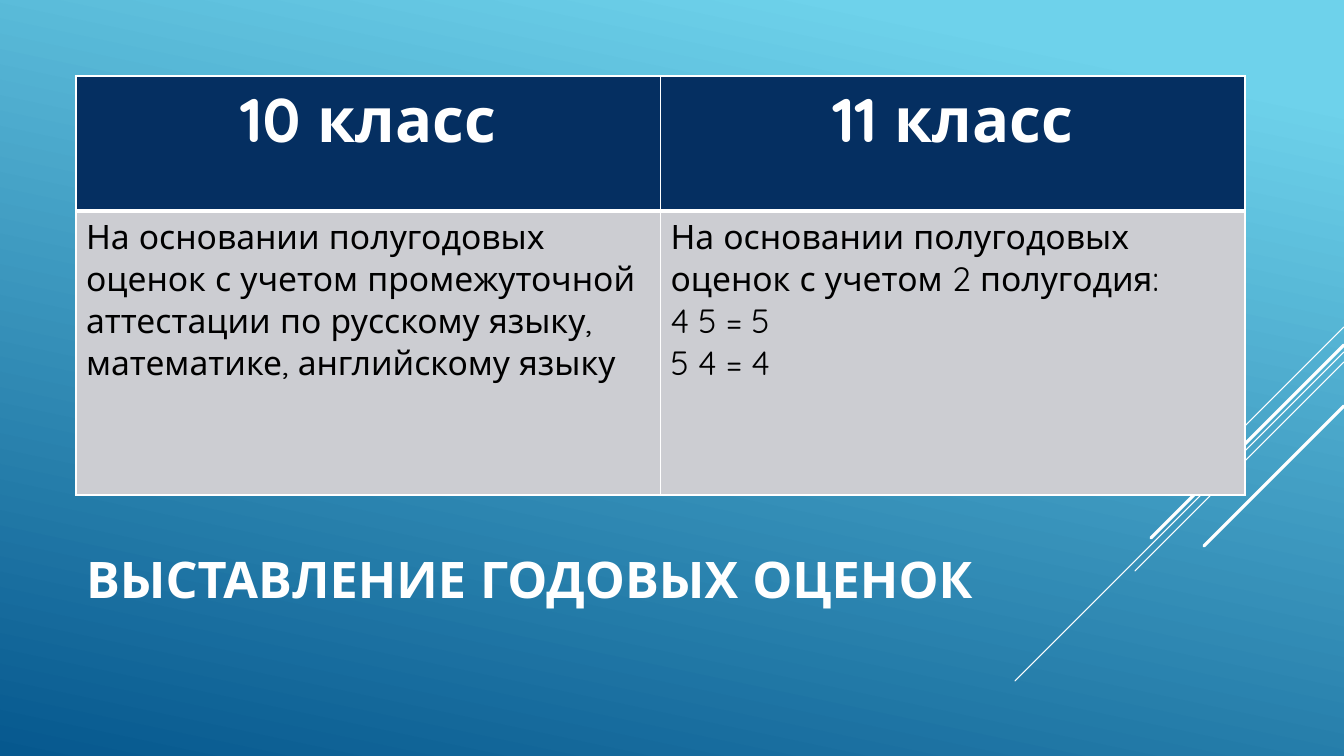
from lxml.etree import SubElement
from pptx import Presentation
from pptx.dml.color import RGBColor
from pptx.enum.shapes import MSO_CONNECTOR
from pptx.enum.text import MSO_ANCHOR, MSO_AUTO_SIZE, PP_ALIGN
from pptx.oxml.ns import qn
from pptx.util import Emu, Pt

PX = 914400 / 100.8
WIDTH, HEIGHT = 1344, 756
FONT = "Quicksand"
COLOURS = {
    "white": "FFFFFF",
    "black": "000000",
    "sky": "6ED2EB",
    "deep": "06588E",
    "navy": "052F61",
    "grey": "CCCDD2",
}
HEADINGS = ["10 класс", "11 класс"]
RULES = [
    "На основании полугодовых оценок с учетом промежуточной аттестации "
    "по русскому языку, математике, английскому языку",
    "На основании полугодовых оценок с учетом 2 полугодия:\n4 5 = 5\n5 4 = 4",
]
# Height at the right edge, horizontal reach and weight in points
STRIPES = [
    (327, 101, 0.75),
    (352, 329, 0.75),
    (362, 209, 0.75),
    (345, 193, 2.25),
    (406, 140, 2.25),
]


def px(length):
    return Emu(round(length * PX))


def colour(name):
    return RGBColor.from_string(COLOURS[name])


def write(frame, text, size, ink, bold=False, align=PP_ALIGN.LEFT):
    """Fill a text frame, one paragraph for each line of the text."""
    frame.word_wrap = True
    frame.text = text
    for para in frame.paragraphs:
        para.alignment = align
        for span in para.runs:
            span.font.name = FONT
            span.font.size = Pt(size)
            span.font.bold = bold
            span.font.color.rgb = colour(ink)


def paint_background(page):
    fill = page.background.fill
    fill.gradient()
    fill.gradient_angle = 258
    for stop, (position, name) in zip(fill.gradient_stops, [(0.1, "sky"), (1, "deep")]):
        stop.position = position
        stop.color.rgb = colour(name)


def add_stripes(page, right):
    """Draw the diagonal stripes, falling at 45 degrees from the right edge."""
    for top, reach, weight in STRIPES:
        stripe = page.shapes.add_connector(
            MSO_CONNECTOR.STRAIGHT, px(right), px(top), px(right - reach), px(top + reach)
        )
        stripe.line.color.rgb = colour("white")
        stripe.line.width = Pt(weight)
        stripe.line._get_or_add_ln().set("cap", "rnd")
        SubElement(stripe._element.spPr, qn("a:effectLst"))


def add_borders(cell, **weights):
    properties = cell._tc.get_or_add_tcPr()
    for side in "LRTB":
        border = SubElement(properties, qn(f"a:ln{side}"), w=str(Pt(weights.get(side, 1))))
        fill = SubElement(border, qn("a:solidFill"))
        SubElement(fill, qn("a:srgbClr"), val=COLOURS["white"])


def add_grades_table(page, left, top, width, heights):
    table = page.shapes.add_table(
        2, len(HEADINGS), px(left), px(top), px(width), px(sum(heights))
    ).table
    for row, height in zip(table.rows, heights):
        row.height = px(height)
    for column, (heading, rule) in enumerate(zip(HEADINGS, RULES)):
        head, body = table.cell(0, column), table.cell(1, column)
        add_borders(head, B=3)
        add_borders(body, T=3)
        for cell, name in ((head, "navy"), (body, "grey")):
            cell.fill.solid()
            cell.fill.fore_color.rgb = colour(name)
        write(head.text_frame, heading, 44, "white", bold=True, align=PP_ALIGN.CENTER)
        write(body.text_frame, rule, 24, "black")


def place_title(page, left, top, width, height):
    title = page.shapes.title
    title.left, title.top, title.width, title.height = map(px, (left, top, width, height))
    frame = title.text_frame
    write(frame, "ВЫСТАВЛЕНИЕ ГОДОВЫХ ОЦЕНОК", 36, "white", bold=True)
    frame.auto_size = MSO_AUTO_SIZE.NONE
    frame.vertical_anchor = MSO_ANCHOR.MIDDLE


def main():
    deck = Presentation()
    deck.slide_width, deck.slide_height = px(WIDTH), px(HEIGHT)
    page = deck.slides.add_slide(deck.slide_layouts.get_by_name("Title Only"))
    paint_background(page)
    add_stripes(page, WIDTH)
    place_title(page, 76, 495, 940, 166)
    add_grades_table(page, 76, 76, 1169, [135, 284])
    deck.save("out.pptx")


if __name__ == "__main__":
    main()
